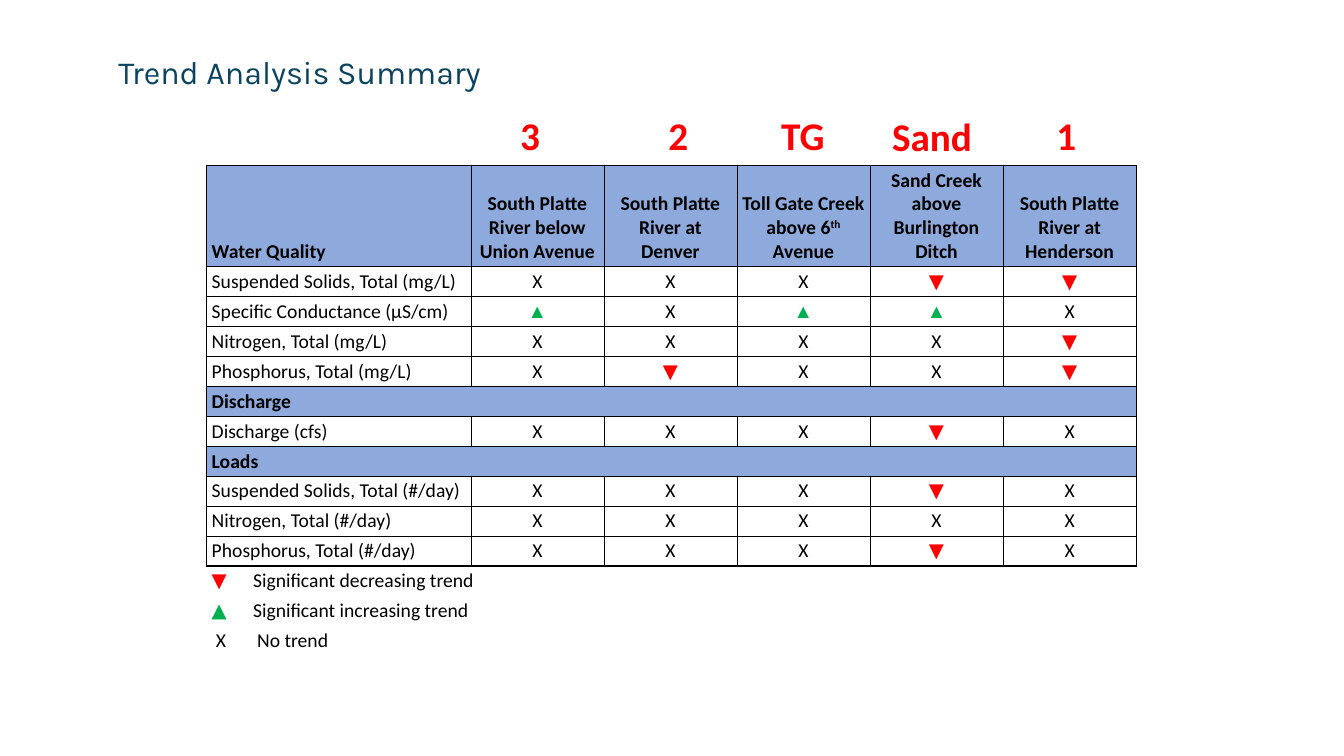
import dataclasses

import lxml.etree
import pptx
import pptx.dml.color
import pptx.enum.text
import pptx.oxml.ns
import pptx.util

PX = 9144  # EMU per px, 100 px to the inch
ALIGN = pptx.enum.text.PP_ALIGN
ANCHOR = pptx.enum.text.MSO_ANCHOR
AUTO_SIZE = pptx.enum.text.MSO_AUTO_SIZE
qn = pptx.oxml.ns.qn
NO_STYLE = "{2D5ABB26-0587-4C30-8999-92F81FD0307C}"


@dataclasses.dataclass(frozen=True)
class Theme:
    title_font: str = "Karla"
    body_font: str = "Calibri"
    rise_font: str = "Times New Roman"
    title_size: int = 23
    tag_size: int = 28
    cell_size: int = 14
    title: str = "0C4360"
    text: str = "000000"
    fall: str = "FF0000"
    rise: str = "00B050"
    band: str = "8EA9DB"
    thin: float = 0.5
    thick: float = 1


class TrendSlide:
    def __init__(self, presentation, theme):
        self.theme = theme
        self.slide = presentation.slides.add_slide(presentation.slide_layouts[5])

    def run(self, paragraph, text, size=None, color=None, font=None, bold=False):
        run = paragraph.add_run()
        run.text = text
        run.font.size = pptx.util.Pt(size or self.theme.cell_size)
        run.font.name = font or self.theme.body_font
        run.font.bold = bold
        run.font.color.rgb = pptx.dml.color.RGBColor.from_string(color or self.theme.text)
        return run

    def title(self, text, left, top, width, height):
        title = self.slide.shapes.title
        title.left, title.top, title.width, title.height = (
            side * PX for side in (left, top, width, height))
        frame = title.text_frame
        frame.word_wrap = True
        frame.auto_size = AUTO_SIZE.NONE
        frame.vertical_anchor = ANCHOR.TOP
        line = frame.paragraphs[0]
        line.alignment = ALIGN.CENTER
        line.line_spacing = 0.9
        self.run(line, text, self.theme.title_size, self.theme.title, self.theme.title_font)

    def site_tag(self, text, left, top, width):
        tag = self.slide.shapes.add_textbox(left * PX, top * PX, width * PX, 57 * PX)
        frame = tag.text_frame
        frame.word_wrap = True
        frame.auto_size = AUTO_SIZE.SHAPE_TO_FIT_TEXT
        self.run(frame.paragraphs[0], text, self.theme.tag_size, self.theme.fall, bold=True)

    def table(self, left, top, widths, heights):
        frame = self.slide.shapes.add_table(
            len(heights), len(widths), left * PX, top * PX, sum(widths) * PX, sum(heights) * PX)
        table = frame.table
        table.first_row = table.horz_banding = False
        table._tbl.tblPr.find(qn("a:tableStyleId")).text = NO_STYLE
        for column, width in zip(table.columns, widths):
            column.width = width * PX
        for row, height in zip(table.rows, heights):
            row.height = height * PX
        return table

    def cell(self, cell, borders, fill=None, anchor=ANCHOR.MIDDLE, align=ALIGN.LEFT):
        """Formats a cell and gives back its paragraph; borders maps L, R, T, B to points."""
        cell.margin_left = cell.margin_right = 5 * PX
        cell.margin_top = cell.margin_bottom = 3 * PX
        cell.vertical_anchor = anchor
        properties = cell._tc.get_or_add_tcPr()
        for side in "LRTB":
            border = lxml.etree.SubElement(properties, qn("a:ln" + side))
            if side not in borders:
                border.set("w", "0")
                lxml.etree.SubElement(border, qn("a:noFill"))
                continue
            border.set("w", str(pptx.util.Pt(borders[side])))
            solid = lxml.etree.SubElement(border, qn("a:solidFill"))
            lxml.etree.SubElement(solid, qn("a:srgbClr")).set("val", self.theme.text)
        if fill:
            cell.fill.solid()
            cell.fill.fore_color.rgb = pptx.dml.color.RGBColor.from_string(fill)
        else:
            cell.fill.background()
        paragraph = cell.text_frame.paragraphs[0]
        paragraph.alignment = align
        return paragraph

    def mark(self, paragraph, mark):
        color, font = {"▼": (self.theme.fall, None),
                       "▲": (self.theme.rise, self.theme.rise_font)}.get(mark, (None, None))
        self.run(paragraph, mark, color=color, font=font)

    def legend(self, cell, borders, mark, meaning, color, start):
        """A mark hanging left of its meaning."""
        paragraph = self.cell(cell, borders)
        hang = 41
        properties = paragraph._p.get_or_add_pPr()
        properties.set("marL", str((start + hang) * PX))
        properties.set("indent", str(-hang * PX))
        self.run(paragraph, mark + "\t", color=color)
        self.run(paragraph, meaning)


SITES = [
    ["South Platte River below Union Avenue"],
    ["South Platte River at Denver"],
    ["Toll Gate Creek above 6", "th", " Avenue"],
    ["Sand Creek above Burlington Ditch"],
    ["South Platte River at Henderson"],
]
# Label and one mark per site; a section heading has no marks
RESULTS = [
    ("Suspended Solids, Total (mg/L)", "XXX▼▼"),
    ("Specific Conductance (µS/cm)", "▲X▲▲X"),
    ("Nitrogen, Total (mg/L)", "XXXX▼"),
    ("Phosphorus, Total (mg/L)", "X▼XX▼"),
    ("Discharge", ""),
    ("Discharge (cfs)", "XXX▼X"),
    ("Loads", ""),
    ("Suspended Solids, Total (#/day)", "XXX▼X"),
    ("Nitrogen, Total (#/day)", "XXXXX"),
    ("Phosphorus, Total (#/day)", "XXX▼X"),
]
TAGS = [("1", 1038, 106, 51), ("3", 506, 106, 472), ("2", 653, 106, 51),
        ("Sand", 875, 107, 133), ("TG", 765, 106, 133)]


def main():
    theme = Theme()
    presentation = pptx.Presentation()
    presentation.slide_width, presentation.slide_height = 1333 * PX, 750 * PX
    page = TrendSlide(presentation, theme)
    page.title("Trend Analysis Summary", 101, 51, 393, 108)

    legend = [("▼", "Significant decreasing trend", theme.fall, 0),
              ("▲", "Significant increasing trend", theme.rise, 0),
              ("X", "No trend", theme.text, 4)]
    last = len(SITES)
    grid = page.table(205, 164, [262] + [132] * last,
                      [100] + [29] * (len(RESULTS) + len(legend)))

    def borders(column, bottom=theme.thin, top=theme.thin):
        return {"L": theme.thin if column else theme.thick,
                "R": theme.thick if column == last else theme.thin,
                "T": top, "B": bottom}

    # Header row
    corner = page.cell(grid.cell(0, 0), borders(0, theme.thick, theme.thick),
                       theme.band, ANCHOR.BOTTOM)
    page.run(corner, "Water Quality", bold=True)
    for column, site in enumerate(SITES, 1):
        heading = page.cell(grid.cell(0, column), borders(column, top=theme.thick),
                            theme.band, ANCHOR.BOTTOM, ALIGN.CENTER)
        for part in site:
            run = page.run(heading, part, bold=True)
            if part == "th":
                run._r.get_or_add_rPr().set("baseline", "30000")

    # Section bands and trend rows
    for row, (label, marks) in enumerate(RESULTS, 1):
        first = grid.cell(row, 0)
        if not marks:
            first.merge(grid.cell(row, last))
            band = page.cell(first, dict.fromkeys("LRTB", theme.thick),
                             theme.band, ANCHOR.BOTTOM)
            page.run(band, label, bold=True)
            continue
        closes = row == len(RESULTS) or not RESULTS[row][1]
        bottom = theme.thick if closes else theme.thin
        page.run(page.cell(first, borders(0, bottom), anchor=ANCHOR.BOTTOM), label)
        for column, mark in enumerate(marks, 1):
            page.mark(page.cell(grid.cell(row, column), borders(column, bottom),
                                align=ALIGN.CENTER), mark)

    # Legend rows
    for row, entry in enumerate(legend, len(RESULTS) + 1):
        first = grid.cell(row, 0)
        first.merge(grid.cell(row, last))
        page.legend(first, {"T": theme.thick} if row == len(RESULTS) + 1 else {}, *entry)

    # Site tags above the table
    for tag in TAGS:
        page.site_tag(*tag)

    presentation.save("out.pptx")


if __name__ == "__main__":
    main()
